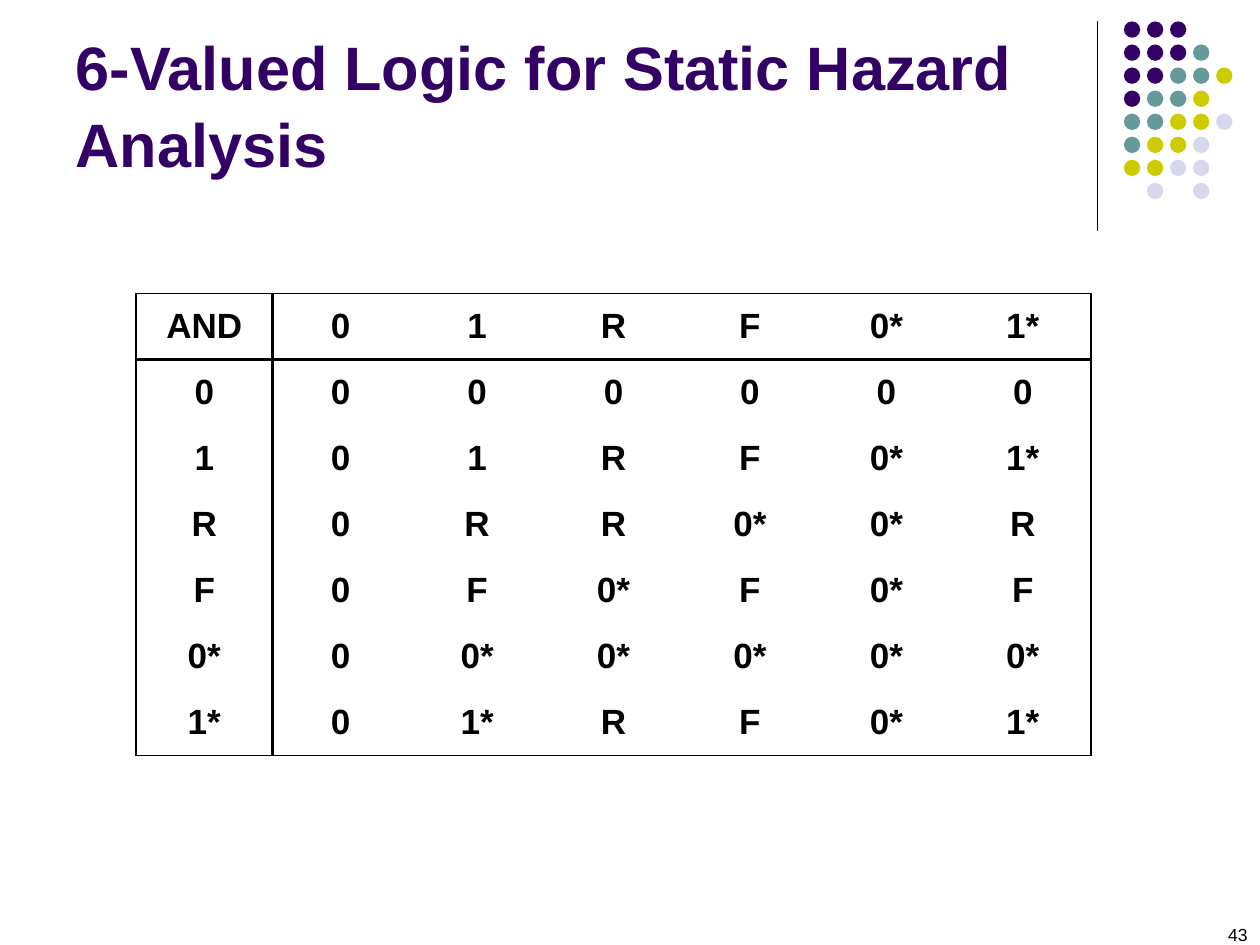
from typing import NamedTuple

import pptx
import pptx.dml.color
import pptx.enum.shapes
import pptx.enum.text
import pptx.oxml.ns
import pptx.util
from lxml import etree

Inches, Pt = pptx.util.Inches, pptx.util.Pt
RGBColor = pptx.dml.color.RGBColor
Align, Anchor = pptx.enum.text.PP_ALIGN, pptx.enum.text.MSO_ANCHOR
qn = pptx.oxml.ns.qn

BLACK = RGBColor(0x00, 0x00, 0x00)
PURPLE = RGBColor(0x33, 0x00, 0x66)
TEAL = RGBColor(0x66, 0x99, 0x99)
OLIVE = RGBColor(0xCC, 0xCC, 0x00)
LAVENDER = RGBColor(0xD8, 0xD8, 0xEC)

DOT_COLORS = {"P": PURPLE, "T": TEAL, "O": OLIVE, "L": LAVENDER}
DOT_ROWS = ["PPP", "PPPT", "PPTTO", "PTTO", "TTOOL", "TOOL", "OOLL", " L L"]
DOT_LEFT, DOT_TOP, DOT_PITCH, DOT_SIZE = 8.92, 0.17, 0.183, 0.13

AND_TABLE = [
    "AND 0 1 R F 0* 1*",
    "0 0 0 0 0 0 0",
    "1 0 1 R F 0* 1*",
    "R 0 R R 0* 0* R",
    "F 0 F 0* F 0* F",
    "0* 0 0* 0* 0* 0* 0*",
    "1* 0 1* R F 0* 1*",
]
OUTER, INNER, NONE = 1, 1.5, 0


class Borders(NamedTuple):
    """Line widths in points; zero means no line."""
    L: float
    R: float
    T: float
    B: float


def style_font(p, size: float, color: RGBColor, bold: bool = False) -> None:
    p.font.name, p.font.size, p.font.bold = "Arial", Pt(size), bold
    p.font.color.rgb = color


def add_title(s, text: str) -> None:
    sp = s.shapes.title
    sp.left, sp.top, sp.width, sp.height = map(Inches, (0.5, 0.13, 8.25, 1.42))
    tf = sp.text_frame
    tf.text = text
    tf.auto_size = pptx.enum.text.MSO_AUTO_SIZE.NONE
    tf.vertical_anchor = Anchor.TOP
    tf.margin_top = Inches(0.08)
    p = tf.paragraphs[0]
    p.alignment, p.line_spacing = Align.LEFT, 1.04
    style_font(p, 35, PURPLE, True)


def add_divider(s) -> None:
    line = s.shapes.add_connector(
        pptx.enum.shapes.MSO_CONNECTOR.STRAIGHT,
        Inches(8.71), Inches(0.17), Inches(8.71), Inches(1.83))
    line.line.color.rgb = BLACK
    line.line.width = Pt(0.75)
    etree.SubElement(line._element.spPr, qn("a:effectLst"))


def add_dots(s) -> None:
    group = s.shapes.add_group_shape()
    for row, pattern in enumerate(DOT_ROWS):
        for col, key in enumerate(pattern):
            if key == " ":
                continue
            dot = group.shapes.add_shape(
                pptx.enum.shapes.MSO_SHAPE.OVAL,
                Inches(DOT_LEFT + col * DOT_PITCH), Inches(DOT_TOP + row * DOT_PITCH),
                Inches(DOT_SIZE), Inches(DOT_SIZE))
            dot.shadow.inherit = False
            dot.fill.solid()
            dot.fill.fore_color.rgb = DOT_COLORS[key]
            dot.line.fill.background()


def set_borders(cell, borders: Borders) -> None:
    tcPr = cell._tc.get_or_add_tcPr()
    for side, width in borders._asdict().items():
        ln = etree.SubElement(tcPr, qn(f"a:ln{side}"), w=str(Pt(width)))
        if width:
            fill = etree.SubElement(ln, qn("a:solidFill"))
            etree.SubElement(fill, qn("a:srgbClr"), val=str(BLACK))
        else:
            etree.SubElement(ln, qn("a:noFill"))


def edge_widths(index: int, last: int) -> tuple[float, float]:
    """Widths before and after a row or column: frame outside, rule after the header."""
    before = {0: OUTER, 1: INNER}.get(index, NONE)
    after = {0: INNER, last: OUTER}.get(index, NONE)
    return before, after


def add_logic_table(s) -> None:
    rows = [line.split() for line in AND_TABLE]
    n_rows, n_cols = len(rows), len(rows[0])
    table = s.shapes.add_table(n_rows, n_cols, Inches(1.08), Inches(2.33),
                               Inches(7.58), Inches(3.67)).table
    table.first_row = table.horz_banding = False
    for r, values in enumerate(rows):
        for c, value in enumerate(values):
            cell = table.cell(r, c)
            cell.text = value
            cell.vertical_anchor = Anchor.MIDDLE
            set_borders(cell, Borders(*edge_widths(c, n_cols - 1),
                                      *edge_widths(r, n_rows - 1)))
            cell.fill.background()
            p = cell.text_frame.paragraphs[0]
            p.alignment = Align.CENTER
            style_font(p, 20, BLACK, True)


def add_slide_number(s, number: str) -> None:
    tf = s.shapes.add_textbox(Inches(7.67), Inches(7.29),
                              Inches(2.33), Inches(0.21)).text_frame
    tf.word_wrap = True
    tf.vertical_anchor = Anchor.BOTTOM
    tf.margin_top = tf.margin_bottom = 0
    tf.text = number
    p = tf.paragraphs[0]
    p.alignment = Align.RIGHT
    style_font(p, 10, BLACK)


def main() -> None:
    prs = pptx.Presentation()
    prs.slide_width, prs.slide_height = Inches(10), Inches(7.5)
    s = prs.slides.add_slide(prs.slide_layouts.get_by_name("Title Only"))
    add_divider(s)
    add_dots(s)
    add_slide_number(s, "43")
    add_title(s, "6-Valued Logic for Static Hazard Analysis")
    add_logic_table(s)
    prs.save("out.pptx")


if __name__ == "__main__":
    main()
